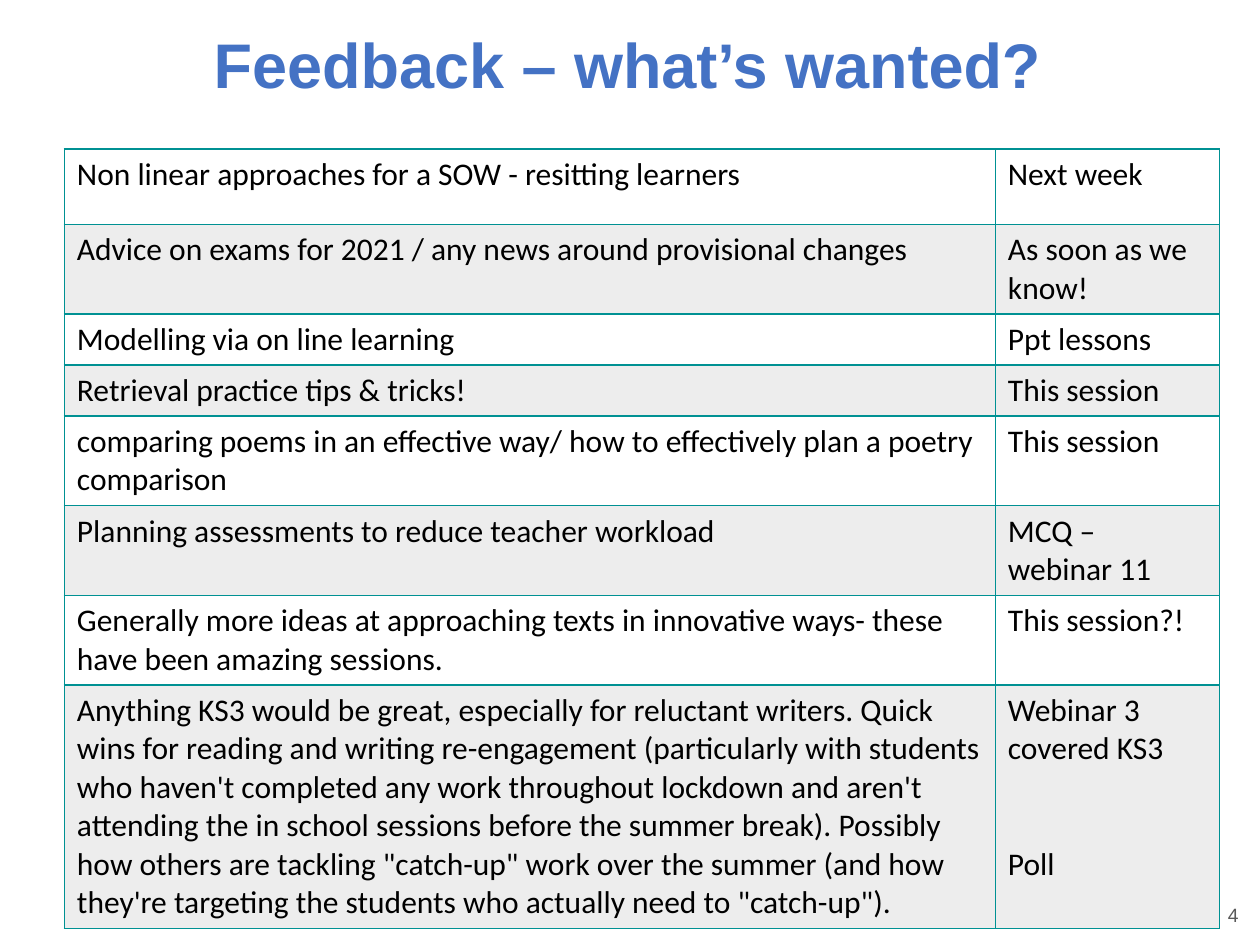
from lxml import etree
from pptx import Presentation
from pptx.dml.color import RGBColor
from pptx.enum.text import PP_ALIGN
from pptx.oxml.ns import qn
from pptx.util import Pt

CENTER, RIGHT = PP_ALIGN.CENTER, PP_ALIGN.RIGHT

TITLE = "Feedback – what’s wanted?"
PAGE_NUMBER = "4"
# request, replies (one per paragraph), number of text lines in the row
FEEDBACK = [
    ("Non linear approaches for a SOW - resitting learners", ["Next week"], 1),
    ("Advice on exams for 2021 / any news around provisional changes",
     ["As soon as we know!"], 2),
    ("Modelling via on line learning", ["Ppt lessons"], 1),
    ("Retrieval practice tips & tricks!", ["This session"], 1),
    ("comparing poems in an effective way/ how to effectively plan a poetry comparison",
     ["This session"], 2),
    ("Planning assessments to reduce teacher workload", ["MCQ – webinar 11"], 2),
    ("Generally more ideas at approaching texts in innovative ways- "
     "these have been amazing sessions.", ["This session?!"], 2),
    ("Anything KS3 would be great, especially for reluctant writers. Quick wins for "
     "reading and writing re-engagement (particularly with students who haven't "
     "completed any work throughout lockdown and aren't attending the in school "
     "sessions before the summer break). Possibly how others are tackling \"catch-up\" "
     "work over the summer (and how they're targeting the students who actually need "
     "to \"catch-up\").", ["Webinar 3 covered KS3", "Poll"], 6),
]
COLUMN_WIDTHS = [532, 128]
LINE_HEIGHT, CELL_PADDING = 22, 7.2
FIRST_ROW_HEIGHT = 43.2
REPLY_GAP = 2 * LINE_HEIGHT
BORDER, BAND = "009193", "EDEDED"


def color(value):
    return RGBColor.from_string(value)


def style(para, font, size, hue, bold=False, align=None):
    para.font.name, para.font.size, para.font.bold = font, Pt(size), bold
    para.font.color.rgb = color(hue)
    para.alignment = align


def add_label(page, text, place, insets, **look):
    box = page.shapes.add_textbox(*map(Pt, place))
    frame = box.text_frame
    frame.word_wrap = True
    frame.margin_left = frame.margin_right = Pt(insets[0])
    frame.margin_top = frame.margin_bottom = Pt(insets[1])
    frame.text = text
    style(frame.paragraphs[0], **look)


def add_borders(cell):
    properties = cell._tc.get_or_add_tcPr()
    for side in ("a:lnL", "a:lnR", "a:lnT", "a:lnB"):
        line = etree.SubElement(properties, qn(side), w=str(Pt(1)))
        fill = etree.SubElement(line, qn("a:solidFill"))
        etree.SubElement(fill, qn("a:srgbClr"), val=BORDER)


def fill_cell(cell, paragraphs, banded):
    add_borders(cell)
    if banded:
        cell.fill.solid()
        cell.fill.fore_color.rgb = color(BAND)
    else:
        cell.fill.background()
    cell.text = "\n".join(paragraphs)
    for index, para in enumerate(cell.text_frame.paragraphs):
        style(para, "Calibri", 18, "000000")
        if index:
            para.space_before = Pt(REPLY_GAP)


def add_feedback_table(page):
    heights = [lines * LINE_HEIGHT + CELL_PADDING for _, _, lines in FEEDBACK]
    heights[0] = FIRST_ROW_HEIGHT
    table = page.shapes.add_table(
        len(FEEDBACK), len(COLUMN_WIDTHS), Pt(36.8), Pt(85),
        Pt(sum(COLUMN_WIDTHS)), Pt(sum(heights))).table
    table.first_row = table.horz_banding = False
    for column, width in zip(table.columns, COLUMN_WIDTHS):
        column.width = Pt(width)
    for index, (request, replies, _) in enumerate(FEEDBACK):
        table.rows[index].height = Pt(heights[index])
        for column, paragraphs in enumerate(([request], replies)):
            fill_cell(table.cell(index, column), paragraphs, index % 2 == 1)


def main():
    deck = Presentation()
    deck.slide_width, deck.slide_height = Pt(720), Pt(540)
    page = deck.slides.add_slide(deck.slide_layouts[6])
    add_label(page, PAGE_NUMBER, (685.4, 512.6, 29.5, 20.9), (7.2, 3.6),
              font="Arial", size=11, hue="595959", align=RIGHT)
    add_label(page, TITLE, (100, 14.4, 517, 87), (0, 0),
              font="Arial", size=36, hue="4472C4", bold=True, align=CENTER)
    add_feedback_table(page)
    deck.save("out.pptx")


if __name__ == "__main__":
    main()
